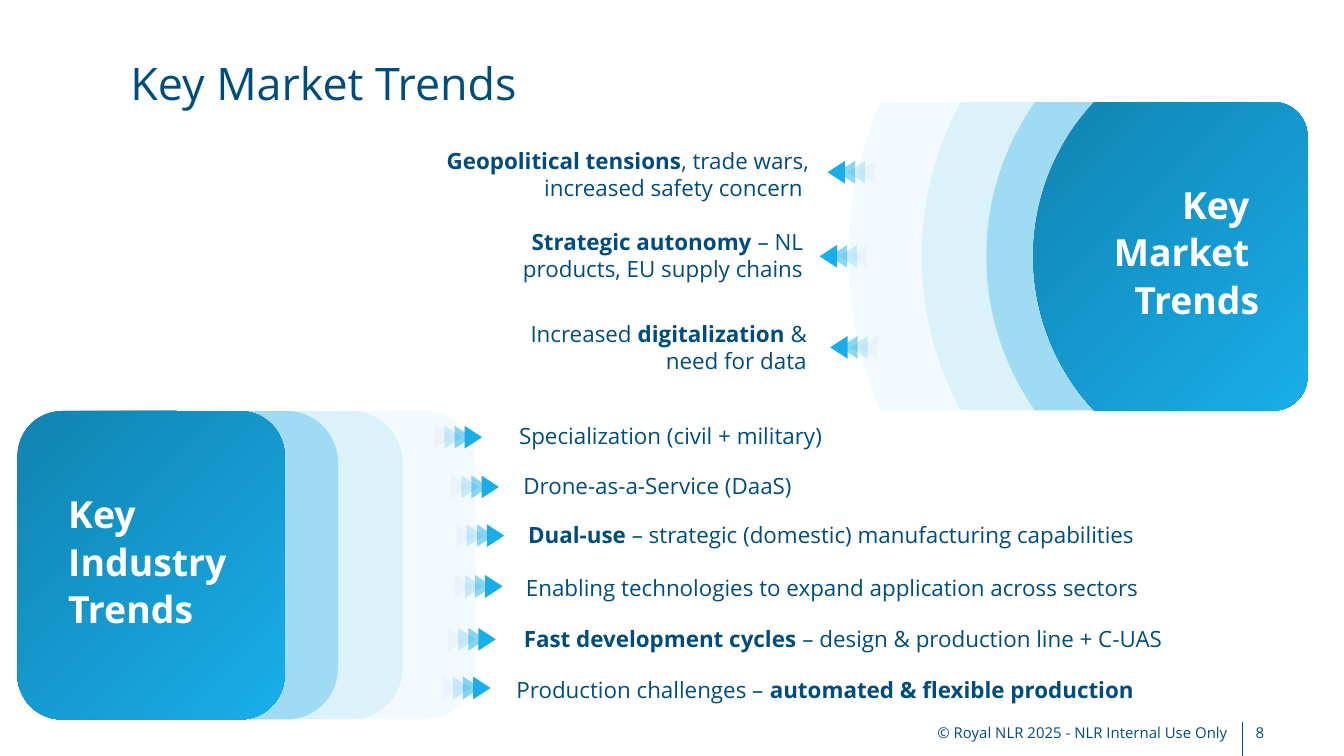
from dataclasses import dataclass
from math import asin, cos, sin, tan

from lxml.etree import SubElement
from pptx import Presentation
from pptx.dml.color import RGBColor
from pptx.enum.shapes import MSO_CONNECTOR as Connector, MSO_SHAPE as Preset
from pptx.enum.text import MSO_ANCHOR as Anchor, MSO_AUTO_SIZE as AutoSize, PP_ALIGN as Align
from pptx.oxml.ns import qn
from pptx.util import Cm, Pt


@dataclass(frozen=True)
class Theme:
    font: str = "Open Sans"
    ink: str = "004D7D"
    white: str = "FFFFFF"
    deep: str = "1183B1"
    bright: str = "19AEE9"
    violet: str = "456AF5"
    title: int = 24
    heading: int = 20
    body: int = 12
    footer: int = 8
    heading_leading: float = 25.5


THEME = Theme()

# Panels share one height; the solid panel of each stack comes last.
PANEL_HEIGHT = 5.83
FADES = (5, 10, 31, None)
MARKET_TOP, MARKET_RIGHT, MARKET_CORNER = 1.93, 24.71, 0.64
MARKET_EDGES = ((16.03, 16.64), (17.42, 18.16), (18.64, 19.56), (19.53, 20.68))
INDUSTRY_LEFT, INDUSTRY_TOP = 0.33, 7.77
INDUSTRY_WIDTHS = (8.66, 7.28, 6.06, 5.05)

# Arrow parts from back to front: steps behind the head, colour and opacity.
ARROW_PARTS = ((1, THEME.bright, 50), (3, THEME.violet, 5),
               (2, THEME.bright, 20), (0, THEME.bright, 100))
ARROW_STEP = 0.19

# Text with **bold** parts, left, top, width, then the head of its arrow.
MARKET_TRENDS = (
    ("**Geopolitical tensions**, trade wars, increased safety concern ", 8.17, 2.65, 7.37, 15.59, 3.09),
    ("**Strategic autonomy **– NL products, EU supply chains", 9.28, 4.19, 6.15, 15.44, 4.68),
    ("Increased **digitalization** & need for data", 8.97, 5.92, 6.53, 15.64, 6.4),
)
INDUSTRY_TRENDS = (
    ("Specialization (civil + military)", 9.56, 7.86, 9.04, 8.73, 8.1),
    ("Drone-as-a-Service (DaaS)", 9.64, 8.79, 9.4, 9.05, 9.04),
    ("**Dual-use **– strategic (domestic) manufacturing capabilities", 9.73, 9.73, 12.29, 9.15, 9.96),
    ("Enabling technologies to expand application across sectors", 9.69, 10.72, 12.55, 9.12, 10.92),
    ("**Fast development cycles **– design & production line + C-UAS", 9.65, 11.69, 12.65, 8.99, 11.92),
    ("Production challenges – **automated & flexible production**", 9.51, 12.65, 14.2, 8.89, 12.84),
)


def write(frame, text, size=THEME.body, color=THEME.ink, bold=False, align=Align.LEFT,
          leading=None, insets=None):
    """Fill a text frame; ** switches bold and a line break starts a paragraph."""
    frame.word_wrap = True
    frame.auto_size = AutoSize.NONE
    frame.vertical_anchor = Anchor.MIDDLE
    if insets:
        frame.margin_left = frame.margin_right = Cm(insets[0])
        frame.margin_top = frame.margin_bottom = Cm(insets[1])
    for index, line in enumerate(text.split("\n")):
        para = frame.add_paragraph() if index else frame.paragraphs[0]
        para.alignment = align
        if leading:
            para.line_spacing = Pt(leading)
        for part, words in enumerate(line.split("**")):
            if not words:
                continue
            span = para.add_run()
            span.text = words
            span.font.name = THEME.font
            span.font.size = Pt(size)
            span.font.bold = bold or part % 2 == 1
            span.font.color.rgb = RGBColor.from_string(color)


def add_text(page, text, left, top, width, height, **style):
    box = page.shapes.add_textbox(Cm(left), Cm(top), Cm(width), Cm(height))
    write(box.text_frame, text, **style)


def paint(shape, color, opacity=100):
    shape.shadow.inherit = False
    shape.line.fill.background()
    shape.fill.solid()
    shape.fill.fore_color.rgb = RGBColor.from_string(color)
    if opacity < 100:
        tint = shape._element.spPr.find(qn("a:solidFill")).find(qn("a:srgbClr"))
        SubElement(tint, qn("a:alpha"), val=str(opacity * 1000))


def paint_panel(shape, opacity):
    """Tint a panel, or give it the diagonal gradient when opacity is None."""
    paint(shape, THEME.bright, opacity or 100)
    if opacity is None:
        shape.fill.gradient()
        shape.fill.gradient_angle = 315
        for stop, color in zip(shape.fill.gradient_stops, (THEME.deep, THEME.bright)):
            stop.color.rgb = RGBColor.from_string(color)


def curved_outline(bulge, shoulder):
    """Segments of one point (line) or three points (curve), clockwise from the top left."""
    top, right, bottom = MARKET_TOP, MARKET_RIGHT, MARKET_TOP + PANEL_HEIGHT
    half, depth = PANEL_HEIGHT / 2, shoulder - bulge
    middle = top + half
    inner, near = right - MARKET_CORNER, MARKET_CORNER * 0.45
    radius = (half ** 2 + depth ** 2) / (2 * depth)
    angle = asin(half / radius)
    handle = 4 / 3 * tan(angle / 4) * radius
    pull_x, pull_y = shoulder - handle * sin(angle), handle * cos(angle)
    return (
        [(inner, top)],
        [(right - near, top), (right, top + near), (right, top + MARKET_CORNER)],
        [(right, bottom - MARKET_CORNER)],
        [(right, bottom - near), (right - near, bottom), (inner, bottom)],
        [(shoulder, bottom)],
        [(pull_x, bottom - pull_y), (bulge, middle + handle), (bulge, middle)],
        [(bulge, middle - handle), (pull_x, top + pull_y), (shoulder, top)],
    )


def add_curved_panel(group, bulge, shoulder):
    segments = curved_outline(bulge, shoulder)
    builder = group.shapes.build_freeform(Cm(shoulder), Cm(MARKET_TOP))
    builder.add_line_segments([(Cm(x), Cm(y)) for segment in segments for x, y in segment])
    panel = builder.convert_to_shape()
    lines = iter(list(panel._element.spPr.iter(qn("a:lnTo"))))
    for segment in segments:
        steps = [next(lines) for _ in segment]
        if len(steps) == 3:
            steps[0].tag = qn("a:cubicBezTo")
            for step in steps[1:]:
                steps[0].append(step[0])
                step.getparent().remove(step)
    return panel


def add_market_panels(page):
    group = page.shapes.add_group_shape()
    for (bulge, shoulder), opacity in zip(MARKET_EDGES, FADES):
        paint_panel(add_curved_panel(group, bulge, shoulder), opacity)


def add_industry_panels(page):
    group = page.shapes.add_group_shape()
    for width, opacity in zip(INDUSTRY_WIDTHS, FADES):
        panel = group.shapes.add_shape(Preset.ROUNDED_RECTANGLE, Cm(INDUSTRY_LEFT),
                                       Cm(INDUSTRY_TOP), Cm(width), Cm(PANEL_HEIGHT))
        paint_panel(panel, opacity)


def add_arrow(page, left, top, direction):
    """Draw a fading row of triangles; direction is 1 for right, -1 for left."""
    group = page.shapes.add_group_shape()
    for steps, color, opacity in ARROW_PARTS:
        triangle = group.shapes.add_shape(Preset.ISOSCELES_TRIANGLE,
                                          Cm(left - direction * steps * ARROW_STEP),
                                          Cm(top), Cm(0.43), Cm(0.33))
        triangle.rotation = 90 if direction > 0 else 270
        paint(triangle, color, opacity)


def add_trends(page, trends, height, align, direction):
    for text, left, top, width, arrow_left, arrow_top in trends:
        add_text(page, text, left, top, width, height, align=align)
        add_arrow(page, arrow_left, arrow_top, direction)


def add_title(page, text):
    title = page.shapes.title
    title.left, title.top, title.width, title.height = Cm(2.21), Cm(0.93), Cm(21.59), Cm(1.27)
    write(title.text_frame, text, size=THEME.title)


def add_footer(page):
    divider = page.shapes.add_connector(Connector.STRAIGHT, Cm(23.47), Cm(13.64), Cm(23.47), Cm(14.29))
    divider.line.color.rgb = RGBColor.from_string(THEME.ink)
    divider.line.width = Pt(0.25)
    SubElement(divider._element.spPr, qn("a:effectLst"))
    add_text(page, "© Royal NLR 2025 - NLR Internal Use Only", 11.17, 13.46, 12.29, 0.76,
             size=THEME.footer, align=Align.RIGHT)
    add_text(page, "8", 23.48, 13.46, 1.17, 0.76, size=THEME.footer)


def main():
    deck = Presentation()
    deck.slide_width, deck.slide_height = Cm(25.4), Cm(14.29)
    page = deck.slides.add_slide(deck.slide_layouts[5])
    heading = dict(size=THEME.heading, color=THEME.white, bold=True,
                   leading=THEME.heading_leading, insets=(0.18, 0.1))

    add_footer(page)
    add_title(page, "Key Market Trends")
    add_industry_panels(page)
    add_market_panels(page)
    add_text(page, "Key \nMarket \nTrends", 18.34, 3.87, 5.64, 1.73, align=Align.RIGHT, **heading)
    add_text(page, "Key Industry Trends", 1.11, 9.72, 4.29, 1.73, **heading)
    add_trends(page, MARKET_TRENDS, 1.27, Align.RIGHT, -1)
    add_trends(page, INDUSTRY_TRENDS, 0.76, Align.LEFT, 1)
    deck.save("out.pptx")


if __name__ == "__main__":
    main()
